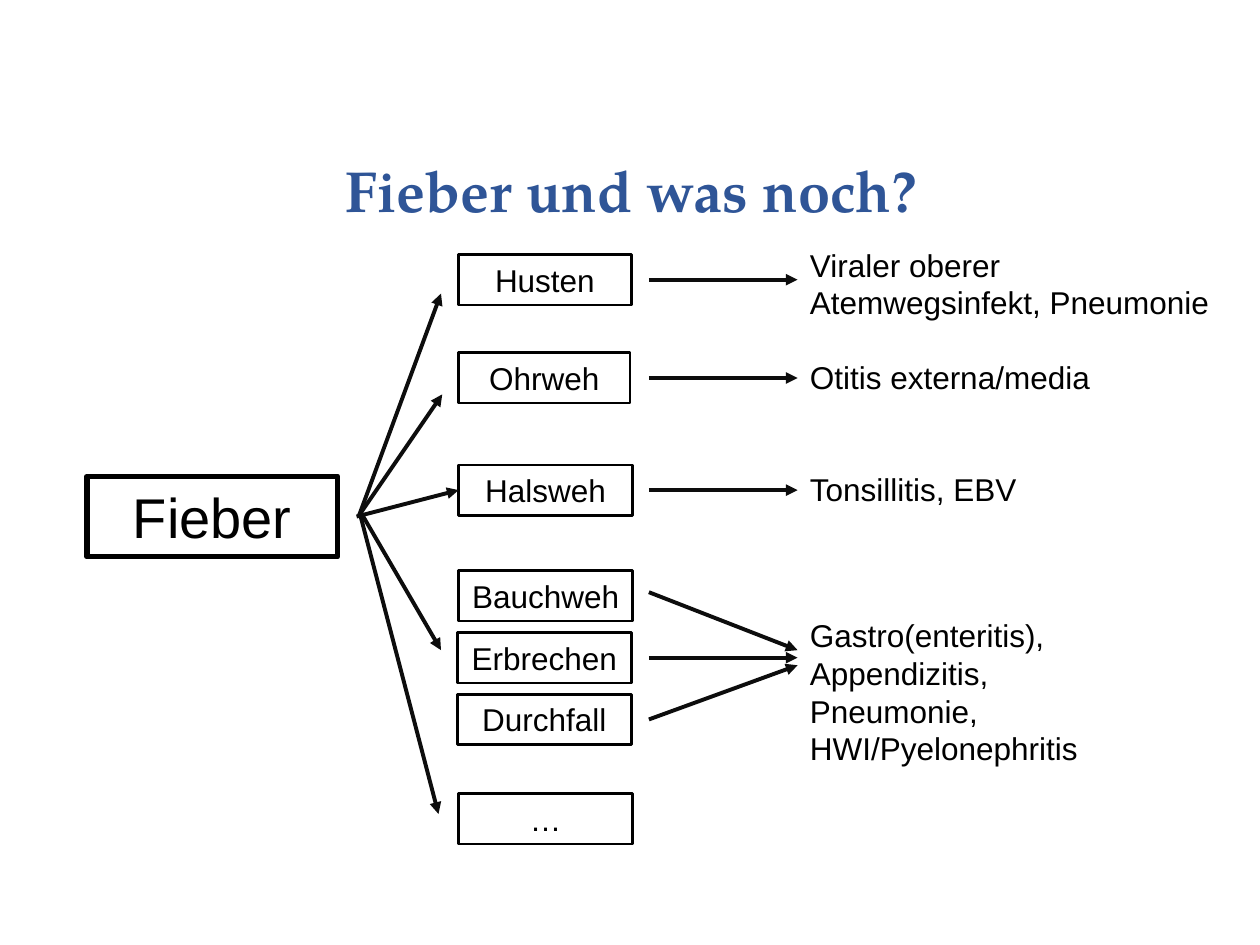
from lxml import etree
from pptx import Presentation
from pptx.dml.color import RGBColor
from pptx.enum.shapes import MSO_CONNECTOR, MSO_SHAPE
from pptx.enum.text import MSO_ANCHOR as Anchor, PP_ALIGN as Align
from pptx.oxml.ns import qn
from pptx.util import Inches, Pt


def color(hex_value):
    return RGBColor.from_string(hex_value)


def write(box, text, size, font="Arial", ink="000000", align=Align.LEFT):
    frame = box.text_frame
    frame.text = text
    frame.word_wrap = True
    para = frame.paragraphs[0]
    para.alignment = align
    span = para.runs[0]
    span.font.size = Pt(size)
    span.font.name = font
    span.font.color.rgb = color(ink)
    return frame


deck = Presentation()
deck.slide_width, deck.slide_height = Inches(10), Inches(7.5)
page = deck.slides.add_slide(deck.slide_layouts[6])

# Title
title = page.shapes.add_textbox(Inches(0.51), Inches(0.91), Inches(9), Inches(1.25))
frame = write(title, "Fieber und was noch?", 33, "TeX Gyre Pagella", "2F5597", Align.CENTER)
frame.vertical_anchor = Anchor.MIDDLE
frame.paragraphs[0].line_spacing = 0.9
frame.paragraphs[0].runs[0].font.bold = True

# Framed symptoms: text, left, top, width, height, font size, line width
symptoms = [
    ("Fieber", 0.69, 3.78, 1.99, 0.64, 32, 3),
    ("Husten", 3.64, 2.02, 1.37, 0.4, 18, 1.5),
    ("Ohrweh", 3.64, 2.8, 1.36, 0.4, 18, 1.5),
    ("Halsweh", 3.64, 3.69, 1.38, 0.4, 18, 1.5),
    ("Bauchweh", 3.64, 4.53, 1.38, 0.4, 18, 1.5),
    ("Erbrechen", 3.63, 5.02, 1.38, 0.4, 18, 1.5),
    ("Durchfall", 3.63, 5.51, 1.38, 0.4, 18, 1.5),
    ("…", 3.64, 6.3, 1.38, 0.4, 18, 1.5),
]
for text, left, top, width, height, size, border in symptoms:
    box = page.shapes.add_shape(
        MSO_SHAPE.RECTANGLE, Inches(left), Inches(top), Inches(width), Inches(height))
    box.shadow.inherit = False
    box.fill.background()
    box.line.color.rgb = color("000000")
    box.line.width = Pt(border)
    frame = write(box, text, size, align=Align.CENTER)
    frame.word_wrap = False
    frame.vertical_anchor = Anchor.TOP

# Arrows: from fever to the symptoms, then from symptoms to diagnoses
fever_arrows = [
    (2.85, 4.09, 3.5, 2.33),
    (2.85, 4.09, 3.51, 3.13),
    (2.83, 4.1, 3.64, 3.89),
    (2.86, 4.06, 3.5, 5.16),
    (2.86, 4.09, 3.48, 6.46),
]
diagnosis_heights = [(2.22, 2.22), (3, 3), (3.89, 3.89), (4.7, 5.16), (5.22, 5.22), (5.71, 5.28)]
diagnosis_arrows = [(5.15, start, 6.33, end) for start, end in diagnosis_heights]
for ends in fever_arrows + diagnosis_arrows:
    arrow = page.shapes.add_connector(MSO_CONNECTOR.STRAIGHT, *map(Inches, ends))
    arrow.line.color.rgb = color("0D0D0D")
    arrow.line.width = Pt(2.25)
    etree.SubElement(arrow.line._get_or_add_ln(), qn("a:tailEnd"), type="triangle")
    etree.SubElement(arrow._element.spPr, qn("a:effectLst"))

# Possible diagnoses: text, top, width, height
diagnoses = [
    ("Viraler oberer Atemwegsinfekt, Pneumonie", 1.9, 3.57, 0.71),
    ("Otitis externa/media", 2.79, 2.53, 0.4),
    ("Tonsillitis, EBV", 3.68, 2.53, 0.4),
    ("Gastro(enteritis), Appendizitis, Pneumonie, HWI/Pyelonephritis", 4.84, 2.53, 1.31),
]
for text, top, width, height in diagnoses:
    box = page.shapes.add_textbox(Inches(6.33), Inches(top), Inches(width), Inches(height))
    write(box, text, 18)

deck.save("out.pptx")
